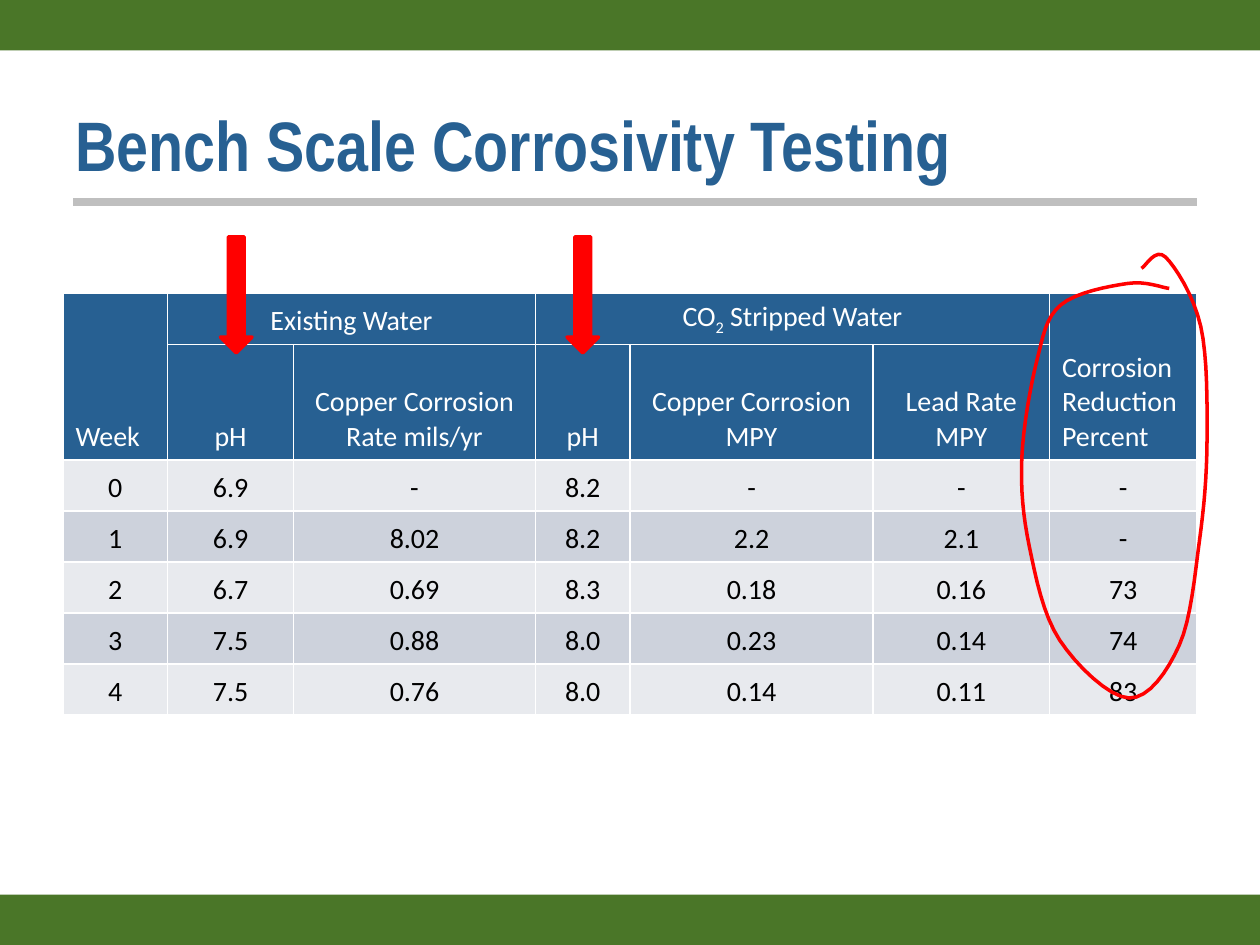
from dataclasses import dataclass

from lxml import etree
from pptx import Presentation
from pptx.dml import color as colors
from pptx.enum import shapes, text
from pptx.oxml import ns
from pptx.util import Inches, Pt


@dataclass(frozen=True)
class Theme:
    green: str = "4A7628"
    blue: str = "276092"
    gray: str = "BFBFBF"
    red: str = "FF0000"
    white: str = "FFFFFF"
    black: str = "000000"
    bands: tuple = ("E8EAEE", "CDD2DC")
    title_font: str = "Arial Narrow"
    body_font: str = "Calibri"
    title_size: float = 40
    body_size: float = 16
    rule_width: float = 4.5
    mark_width: float = 2
    border_width: float = 1


SLIDE_WIDTH, SLIDE_HEIGHT, BAR_HEIGHT = 10, 7.5, 0.4
TABLE_LEFT, TABLE_TOP, TABLE_HEIGHT = 0.5, 2.33, 3.07
SUBHEADER_HEIGHT = 0.64
COLUMN_WIDTHS = [0.83, 1, 1.92, 0.75, 1.93, 1.4, 1.17]
HEADER_GROUPS = [
    (["Week"], []),
    (["Existing Water"], ["pH", "Copper Corrosion Rate mils/yr"]),
    (["CO", "2", " Stripped Water"], ["pH", "Copper Corrosion MPY", "Lead Rate MPY"]),
    (["Corrosion Reduction Percent"], []),
]
WEEKLY_RESULTS = [
    ["0", "6.9", "-", "8.2", "-", "-", "-"],
    ["1", "6.9", "8.02", "8.2", "2.2", "2.1", "-"],
    ["2", "6.7", "0.69", "8.3", "0.18", "0.16", "73"],
    ["3", "7.5", "0.88", "8.0", "0.23", "0.14", "74"],
    ["4", "7.5", "0.76", "8.0", "0.14", "0.11", "83"],
]
PH_ARROW_LEFTS = [1.75, 4.5]
LOOP_TURNS = {
    "start": (9.28, 2.29),
    "top": (8.95, 2.25),
    "upper left": (8.42, 2.42),
    "left shoulder": (8.23, 2.86),
    "left side": (8.11, 3.64),
    "left hip": (8.17, 4.34),
    "lower left": (8.41, 5.08),
    "bottom": (8.96, 5.54),
    "lower right": (9.36, 5.12),
    "right hip": (9.52, 4.29),
    "right side": (9.58, 3.5),
    "right shoulder": (9.53, 2.59),
    "tail crest": (9.25, 2.04),
    "end": (9.06, 2.13),
}


def blend(before, start, end, after, t):
    return start + t / 2 * (
        end - before
        + t * (2 * before - 5 * start + 4 * end - after)
        + t * t * (3 * (start - end) + after - before))


def smooth_curve(turns, steps=8):
    padded = [turns[0], *turns, turns[-1]]
    curve = [turns[0]]
    for window in zip(padded, padded[1:], padded[2:], padded[3:]):
        for step in range(1, steps + 1):
            curve.append(tuple(blend(*axis, step / steps) for axis in zip(*window)))
    return curve


def rgb(value):
    return colors.RGBColor.from_string(value)


class SlideBuilder:
    def __init__(self, presentation, theme):
        self.theme = theme
        self.slide = presentation.slides.add_slide(presentation.slide_layouts[5])

    def format_font(self, font, name, size, color, bold=False):
        values = {"name": name, "size": Pt(size), "bold": bold}
        for attribute, value in values.items():
            setattr(font, attribute, value)
        font.color.rgb = rgb(color)

    def format_line(self, line, color, width):
        line.color.rgb = rgb(color)
        line.width = Pt(width)

    def title(self, wording, left, top, width, height):
        shape = self.slide.shapes.title
        box = {"left": left, "top": top, "width": width, "height": height}
        for attribute, value in box.items():
            setattr(shape, attribute, Inches(value))
        frame = shape.text_frame
        frame.text = wording
        frame.vertical_anchor = text.MSO_ANCHOR.MIDDLE
        paragraph = frame.paragraphs[0]
        paragraph.alignment = text.PP_ALIGN.LEFT
        self.format_font(paragraph.runs[0].font, self.theme.title_font,
                         self.theme.title_size, self.theme.blue, bold=True)

    def solid(self, kind, left, top, width, height, color):
        shape = self.slide.shapes.add_shape(
            kind, Inches(left), Inches(top), Inches(width), Inches(height))
        shape.shadow.inherit = False
        shape.fill.solid()
        shape.fill.fore_color.rgb = rgb(color)
        shape.line.fill.background()
        return shape

    def bar(self, top):
        self.solid(shapes.MSO_SHAPE.RECTANGLE, 0, top, SLIDE_WIDTH, BAR_HEIGHT,
                   self.theme.green)

    def arrow(self, left, top, width, height):
        shape = self.solid(shapes.MSO_SHAPE.DOWN_ARROW, left, top, width, height,
                           self.theme.red)
        self.format_line(shape.line, self.theme.red, self.theme.mark_width)

    def rule(self, left, right, y):
        connector = self.slide.shapes.add_connector(
            shapes.MSO_CONNECTOR.STRAIGHT,
            Inches(left), Inches(y), Inches(right), Inches(y))
        self.format_line(connector.line, self.theme.gray, self.theme.rule_width)
        etree.SubElement(connector._element.spPr, ns.qn("a:effectLst"))

    def pen_stroke(self, turns):
        start, *rest = [(Inches(x), Inches(y)) for x, y in smooth_curve(turns)]
        builder = self.slide.shapes.build_freeform(*start)
        builder.add_line_segments(rest, close=False)
        shape = builder.convert_to_shape()
        shape.shadow.inherit = False
        shape.fill.background()
        self.format_line(shape.line, self.theme.red, self.theme.mark_width)

    def cell_style(self, cell, fill):
        properties = cell._tc.get_or_add_tcPr()
        for side in "LRTB":
            border = etree.SubElement(properties, ns.qn(f"a:ln{side}"),
                                      w=str(Pt(self.theme.border_width)))
            paint = etree.SubElement(border, ns.qn("a:solidFill"))
            etree.SubElement(paint, ns.qn("a:srgbClr"), val=self.theme.white)
        cell.fill.solid()
        cell.fill.fore_color.rgb = rgb(fill)
        cell.vertical_anchor = text.MSO_ANCHOR.BOTTOM

    def cell_text(self, cell, pieces, color, alignment=text.PP_ALIGN.CENTER):
        paragraph = cell.text_frame.paragraphs[0]
        paragraph.alignment = alignment
        for index, piece in enumerate(pieces):
            run = paragraph.add_run()
            run.text = piece
            self.format_font(run.font, self.theme.body_font,
                             self.theme.body_size, color)
            if index % 2:
                run._r.get_or_add_rPr().set("baseline", "-25000")

    def header(self, table, groups):
        color = self.theme.white
        column = 0
        for heading, subheadings in groups:
            cell = table.cell(0, column)
            if subheadings:
                cell.merge(table.cell(0, column + len(subheadings) - 1))
                self.cell_text(cell, heading, color)
            else:
                cell.merge(table.cell(1, column))
                self.cell_text(cell, heading, color, text.PP_ALIGN.LEFT)
            for offset, subheading in enumerate(subheadings):
                self.cell_text(table.cell(1, column + offset), [subheading], color)
            column += max(1, len(subheadings))

    def table(self, groups, results):
        row_count = len(results) + 2
        row_height = (TABLE_HEIGHT - SUBHEADER_HEIGHT) / (row_count - 1)
        table = self.slide.shapes.add_table(
            row_count, len(COLUMN_WIDTHS), Inches(TABLE_LEFT), Inches(TABLE_TOP),
            Inches(sum(COLUMN_WIDTHS)), Inches(TABLE_HEIGHT)).table
        for column, width in zip(table.columns, COLUMN_WIDTHS):
            column.width = Inches(width)
        for i, row in enumerate(table.rows):
            row.height = Inches(SUBHEADER_HEIGHT if i == 1 else row_height)
            for cell in row.cells:
                self.cell_style(cell, self.theme.blue if i < 2 else self.theme.bands[i % 2])
        self.header(table, groups)
        for i, result in enumerate(results, start=2):
            for j, value in enumerate(result):
                self.cell_text(table.cell(i, j), [value], self.theme.black)


def main():
    presentation = Presentation()
    presentation.slide_width = Inches(SLIDE_WIDTH)
    presentation.slide_height = Inches(SLIDE_HEIGHT)
    builder = SlideBuilder(presentation, Theme())
    for top in (0, SLIDE_HEIGHT - BAR_HEIGHT):
        builder.bar(top)
    builder.rule(0.58, 9.5, 1.6)
    builder.title("Bench Scale Corrosivity Testing", 0.5, 0.69, 9, 0.9)
    builder.table(HEADER_GROUPS, WEEKLY_RESULTS)
    for left in PH_ARROW_LEFTS:
        builder.arrow(left, 1.88, 0.25, 0.92)
    builder.pen_stroke(list(LOOP_TURNS.values()))
    presentation.save("out.pptx")


if __name__ == "__main__":
    main()
